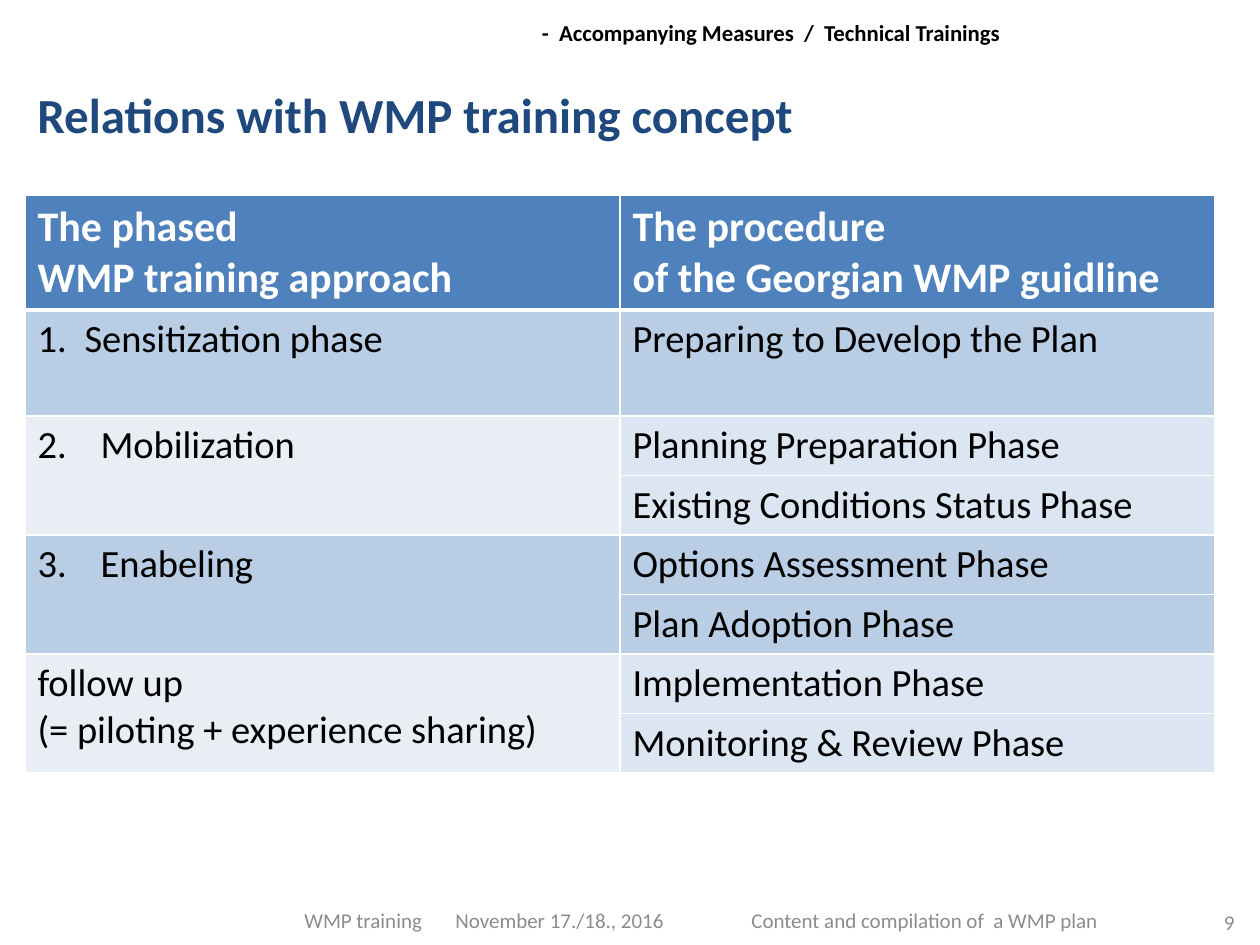
from lxml.etree import SubElement
from pptx import Presentation
from pptx.dml.color import RGBColor
from pptx.enum.text import MSO_ANCHOR as Anchor, PP_ALIGN as Align
from pptx.oxml.ns import qn
from pptx.util import Emu, Pt

PX = 914400 // 126
FONT = "Calibri"
COLORS = {"white": "FFFFFF", "black": "000000", "gray": "8C8C8C", "navy": "1F497D",
          "blue": "4F81BD", "mid": "B9CDE5", "light": "DCE6F2", "pale": "E9EDF4"}

# text, (left, top, width, height), size, color, options
TEXTS = [
    ("-  Accompanying Measures  /  Technical Trainings", (532, 14, 501, 39), 13, "black",
     {"bold": True, "inset": (10, 5), "fill": "white"}),
    ("Content and compilation of  a WMP plan", (739, 895, 436, 50), 12, "gray",
     {"anchor": Anchor.MIDDLE}),
    ("WMP training\tNovember 17./18., 2016", (292, 895, 387, 50), 12, "gray",
     {"anchor": Anchor.MIDDLE, "tab": 151}),
    ("9", (1137, 897, 110, 50), 12, "gray", {"anchor": Anchor.MIDDLE, "align": Align.RIGHT}),
    ("Relations with WMP training concept", (25, 78, 1221, 67), 28, "navy", {"bold": True}),
]

HEADER = ("The phased \vWMP training approach", "The procedure \vof the Georgian WMP guidline")
# phase, hanging indent of its number (0 = unnumbered), fills, steps
PHASES = [
    ("Sensitization phase", 47, ("mid", "mid"), ["Preparing to Develop the Plan"]),
    ("Mobilization", 63, ("pale", "light"),
     ["Planning Preparation Phase", "Existing Conditions Status Phase"]),
    ("Enabeling", 63, ("mid", "mid"), ["Options Assessment Phase", "Plan Adoption Phase"]),
    ("follow up \v(= piloting + experience sharing)", 0, ("pale", "light"),
     ["Implementation Phase", "Monitoring & Review Phase"]),
]
TABLE_LEFT, TABLE_TOP, COLUMN_WIDTH = 25, 195, 595
HEADER_HEIGHT, SINGLE_HEIGHT, STEP_HEIGHT = 115, 106, 59.5


def px(value):
    return Emu(round(value * PX))


def color(name):
    return RGBColor.from_string(COLORS[name])


def set_font(para, size, name, bold=False):
    font = para.font
    font.name, font.size, font.bold = FONT, Pt(size), bold
    font.color.rgb = color(name)


def add_text(page, text, place, size, name, options):
    box = page.shapes.add_textbox(*map(px, place))
    if "fill" in options:
        box.fill.solid()
        box.fill.fore_color.rgb = color(options["fill"])
    frame = box.text_frame
    frame.word_wrap = True
    frame.vertical_anchor = options.get("anchor", Anchor.TOP)
    if "inset" in options:
        side, edge = map(px, options["inset"])
        frame.margin_left = frame.margin_right = side
        frame.margin_top = frame.margin_bottom = edge
    para = frame.paragraphs[0]
    para.text = text
    para.alignment = options.get("align", Align.LEFT)
    if "tab" in options:
        tabs = SubElement(para._p.get_or_add_pPr(), qn("a:tabLst"))
        SubElement(tabs, qn("a:tab"), pos=str(px(options["tab"])), algn="l")
    set_font(para, size, name, options.get("bold", False))


def style_cell(cell, fill, top=1, bottom=1):
    """White borders (widths in points) around a solid fill."""
    properties = cell._tc.get_or_add_tcPr()
    for side, width in (("L", 1), ("R", 1), ("T", top), ("B", bottom)):
        line = SubElement(properties, qn("a:ln" + side), w=str(Pt(width)))
        solid = SubElement(line, qn("a:solidFill"))
        SubElement(solid, qn("a:srgbClr"), val=COLORS["white"])
    cell.fill.solid()
    cell.fill.fore_color.rgb = color(fill)


def write_cell(cell, text, size=22, name="black", bold=False, number=0, indent=0):
    para = cell.text_frame.paragraphs[0]
    para.text = text
    if indent:
        properties = para._p.get_or_add_pPr()
        properties.set("marL", str(px(indent)))
        properties.set("indent", str(-px(indent)))
        SubElement(properties, qn("a:buFont"), typeface="+mj-lt")
        SubElement(properties, qn("a:buAutoNum"), type="arabicPeriod", startAt=str(number))
    set_font(para, size, name, bold)


def add_phase_table(page):
    heights = [HEADER_HEIGHT]
    for *_, steps in PHASES:
        heights += [SINGLE_HEIGHT if len(steps) == 1 else STEP_HEIGHT] * len(steps)
    table = page.shapes.add_table(
        len(heights), 2, px(TABLE_LEFT), px(TABLE_TOP),
        px(2 * COLUMN_WIDTH), px(sum(heights))).table
    table.first_row = table.horz_banding = False
    for column in table.columns:
        column.width = px(COLUMN_WIDTH)
    for row, height in zip(table.rows, heights):
        row.height = px(height)

    for index, text in enumerate(HEADER):
        style_cell(table.cell(0, index), "blue", bottom=3)
        write_cell(table.cell(0, index), text, 24, "white", True)

    first = 1
    for number, (phase, indent, fills, steps) in enumerate(PHASES, 1):
        for row, step in enumerate(steps, first):
            for column, fill in enumerate(fills):
                style_cell(table.cell(row, column), fill, top=3 if row == 1 else 1)
            write_cell(table.cell(row, 1), step)
        write_cell(table.cell(first, 0), phase, number=number, indent=indent)
        if len(steps) > 1:
            table.cell(first, 0).merge(table.cell(first + len(steps) - 1, 0))
        first += len(steps)


def main():
    deck = Presentation()
    deck.slide_width, deck.slide_height = px(1260), px(945)
    page = deck.slides.add_slide(deck.slide_layouts[6])
    for item in TEXTS:
        add_text(page, *item)
    add_phase_table(page)
    deck.save("out.pptx")


if __name__ == "__main__":
    main()
